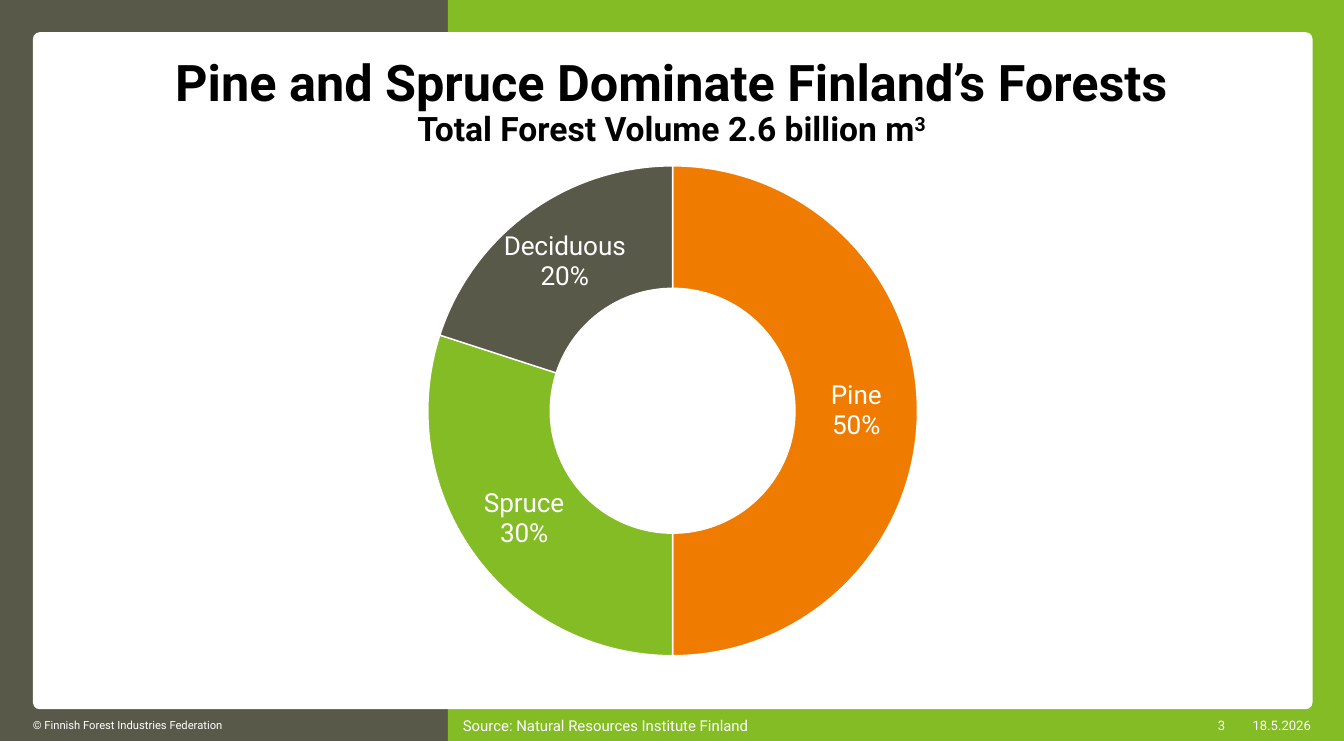
from lxml import etree
from pptx import Presentation
from pptx.chart.data import CategoryChartData
from pptx.dml.color import RGBColor
from pptx.enum.chart import XL_CHART_TYPE
from pptx.enum.shapes import MSO_SHAPE as SHAPE
from pptx.enum.text import MSO_ANCHOR, PP_ALIGN as ALIGN
from pptx.oxml.ns import qn
from pptx.util import Pt

FONT = "Roboto"
C = {"grey": "595949", "green": "84BC26", "orange": "EF7C00",
     "white": "FFFFFF", "black": "000000"}


def rgb(name):
    return RGBColor.from_string(C[name])


def style(font, size, color, bold=False):
    font.name = FONT
    font.size = Pt(size)
    font.bold = bold
    font.color.rgb = rgb(color)


prs = Presentation()
prs.slide_width, prs.slide_height = Pt(1440), Pt(793.5)
s = prs.slides.add_slide(prs.slide_layouts[6])

panels = [
    (SHAPE.RECTANGLE, 0, 0, 480, 793.5, "grey"),
    (SHAPE.RECTANGLE, 480, 0, 960, 793.5, "green"),
    (SHAPE.ROUNDED_RECTANGLE, 35.3, 34.5, 1371, 725, "white"),
]
for kind, x, y, w, h, color in panels:
    sp = s.shapes.add_shape(kind, Pt(x), Pt(y), Pt(w), Pt(h))
    sp.shadow.inherit = False
    sp.fill.solid()
    sp.fill.fore_color.rgb = rgb(color)
    sp.line.fill.background()
sp.adjustments[0] = 0.01

data = CategoryChartData()
data.categories = ["Pine", "Spruce", "Deciduous"]
data.add_series("Series 1", (50, 30, 20))
chart = s.shapes.add_chart(XL_CHART_TYPE.DOUGHNUT, Pt(102.2), Pt(166.3),
                           Pt(1237), Pt(545.8), data).chart
chart.has_legend = False
chart.has_title = False
style(chart.font, 10, "grey")
plot = chart.plots[0]
plot.vary_by_categories = True
series = plot.series[0]
for i, color in enumerate(("orange", "green", "grey")):
    fmt = series.points[i].format
    fmt.fill.solid()
    fmt.fill.fore_color.rgb = rgb(color)
    fmt.line.color.rgb = rgb("white")
    fmt.line.width = Pt(1.5)

labels = series.data_labels
labels.show_value = False
labels.show_category_name = True
labels.show_percentage = True
labels.number_format = "0%"
labels.number_format_is_linked = False
style(labels.font, 28, "white")
separator = etree.Element(qn("c:separator"))
separator.text = "\n"
labels._element.find(qn("c:showBubbleSize")).addnext(separator)

tf = s.shapes.add_textbox(Pt(88.6), Pt(59), Pt(1262), Pt(104.4)).text_frame
tf.word_wrap = True
tf.text = "Pine and Spruce Dominate Finland’s Forests\nTotal Forest Volume 2.6 billion m"
sup = tf.paragraphs[1].add_run()
sup.text = "3"
for p, size in zip(tf.paragraphs, (54, 36)):
    p.alignment = ALIGN.CENTER
    p.line_spacing = 0.9
    for r in p.runs:
        style(r.font, size, "black", True)
sup._r.get_or_add_rPr().set("baseline", "30000")

footers = [
    ("© Finnish Forest Industries Federation", 35.3, 764.6, 445, 24.5, 12, ALIGN.LEFT),
    ("Source: Natural Resources Institute Finland", 496, 759.6, 448, 34.5, 16, ALIGN.LEFT),
    ("3", 1273.7, 759.6, 39, 34.5, 14, ALIGN.RIGHT),
    ("18.5.2026", 1326.2, 759.6, 78.5, 34.5, 14, ALIGN.RIGHT),
]
for text, x, y, w, h, size, align in footers:
    tf = s.shapes.add_textbox(Pt(x), Pt(y), Pt(w), Pt(h)).text_frame
    tf.word_wrap = True
    tf.vertical_anchor = MSO_ANCHOR.MIDDLE
    tf.margin_left = tf.margin_right = tf.margin_top = tf.margin_bottom = 0
    tf.text = text
    p = tf.paragraphs[0]
    p.alignment = align
    style(p.runs[0].font, size, "white")

prs.save("out.pptx")
